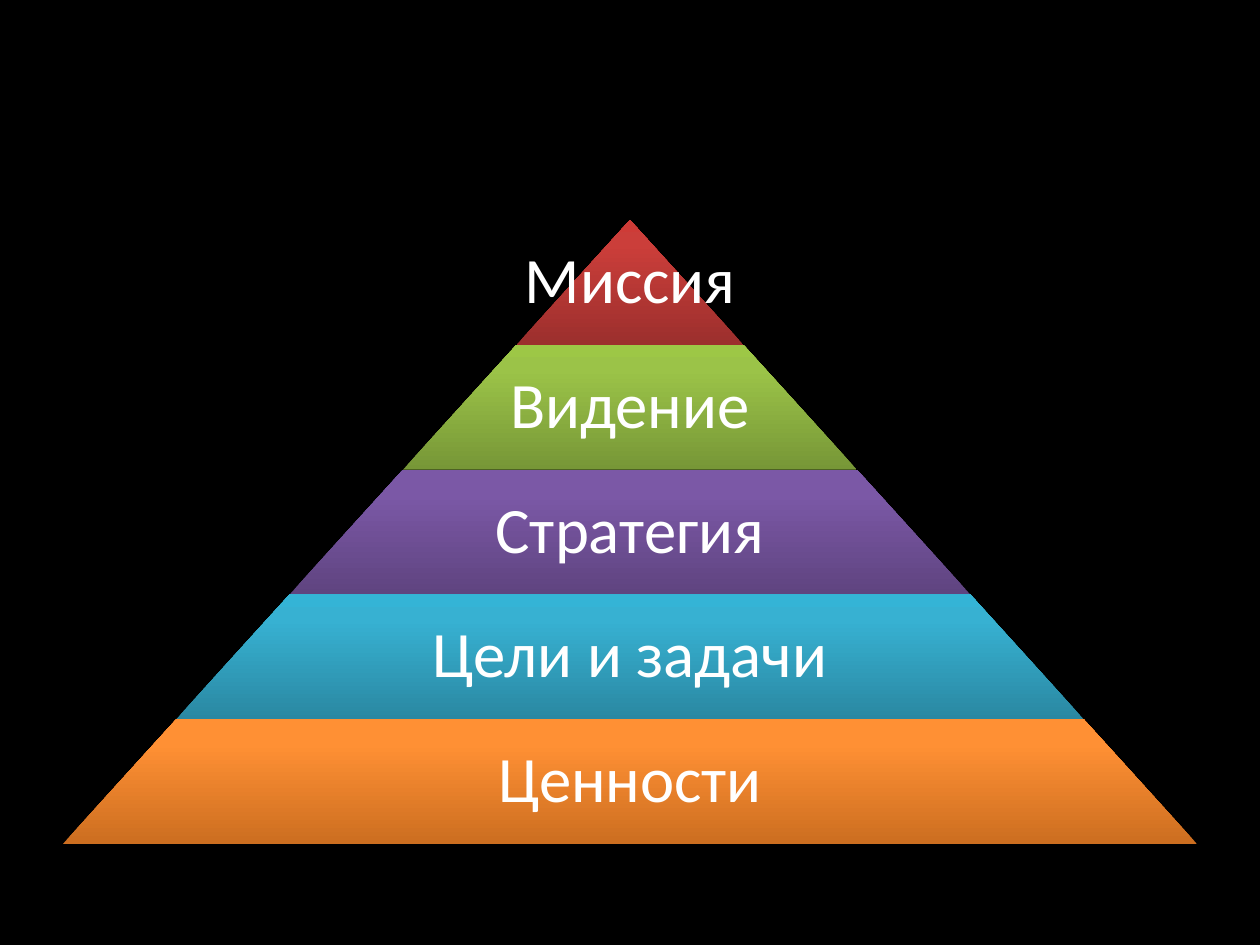
import copy
import pptx
import pptx.util
import pptx.dml.color
import pptx.enum.shapes
import pptx.enum.text

SCALE = 914400 / 126
TIERS = [
    ("Миссия", ("9C2F2D", "CB3E3A", "CE3B37")),
    ("Видение", ("779737", "9BC348", "9DC746")),
    ("Стратегия", ("5F4480", "7B58A6", "7C57A8")),
    ("Цели и задачи", ("2A88A2", "37B1D2", "34B4D6")),
    ("Ценности", ("CC6E20", "FF9034", "FF9136")),
]
STOPS = (0, 0.8, 1)
INSET = pptx.util.Pt(3.6)
FRAME = {
    "word_wrap": True,
    "vertical_anchor": pptx.enum.text.MSO_ANCHOR.MIDDLE,
    "margin_left": INSET,
    "margin_right": INSET,
    "margin_top": INSET,
    "margin_bottom": INSET,
}
PARA = {"alignment": pptx.enum.text.PP_ALIGN.CENTER, "line_spacing": 0.9}
FONT = {"name": "Calibri", "size": pptx.util.Pt(37)}


def emu(*sizes):
    return [round(size * SCALE) for size in sizes]


def paint(color, code):
    color.rgb = pptx.dml.color.RGBColor.from_string(code)


def format(item, values):
    for key, value in values.items():
        setattr(item, key, value)


def shade(shape, codes):
    fill = shape.fill
    fill.gradient()
    fill.gradient_angle = 90
    first = shape._element.xpath(".//a:gs")[0]
    first.addnext(copy.deepcopy(first))
    for stop, place, code in zip(fill.gradient_stops, STOPS, codes):
        stop.position = place
        paint(stop.color, code)


def label(slide, box, text):
    frame = slide.shapes.add_textbox(*emu(*box)).text_frame
    format(frame, FRAME)
    line = frame.paragraphs[0]
    line.text = text
    format(line, PARA)
    font = line.runs[0].font
    format(font, FONT)
    paint(font.color, "FFFFFF")


def pyramid(slide, left, top, width, height, tiers):
    tall = height / len(tiers)
    step = width / len(tiers)
    mid = left + width / 2
    for row, (text, codes) in enumerate(tiers):
        wide = step * (row + 1)
        y = top + row * tall
        shape = slide.shapes.add_shape(
            pptx.enum.shapes.MSO_SHAPE.TRAPEZOID,
            *emu(mid - wide / 2, y, wide, tall))
        shape.adjustments[0] = step / 2 / tall
        shape.shadow.inherit = False
        shape.line.fill.background()
        shade(shape, codes)
        span = wide * 0.65 if row else wide
        label(slide, (mid - span / 2, y, span, tall), text)


def main():
    deck = pptx.Presentation()
    deck.slide_width, deck.slide_height = emu(1260, 945)
    slide = deck.slides.add_slide(deck.slide_layouts[6])
    fill = slide.background.fill
    fill.solid()
    paint(fill.fore_color, "000000")
    pyramid(slide, 63, 220, 1134, 624, TIERS)
    deck.save("out.pptx")


if __name__ == "__main__":
    main()
